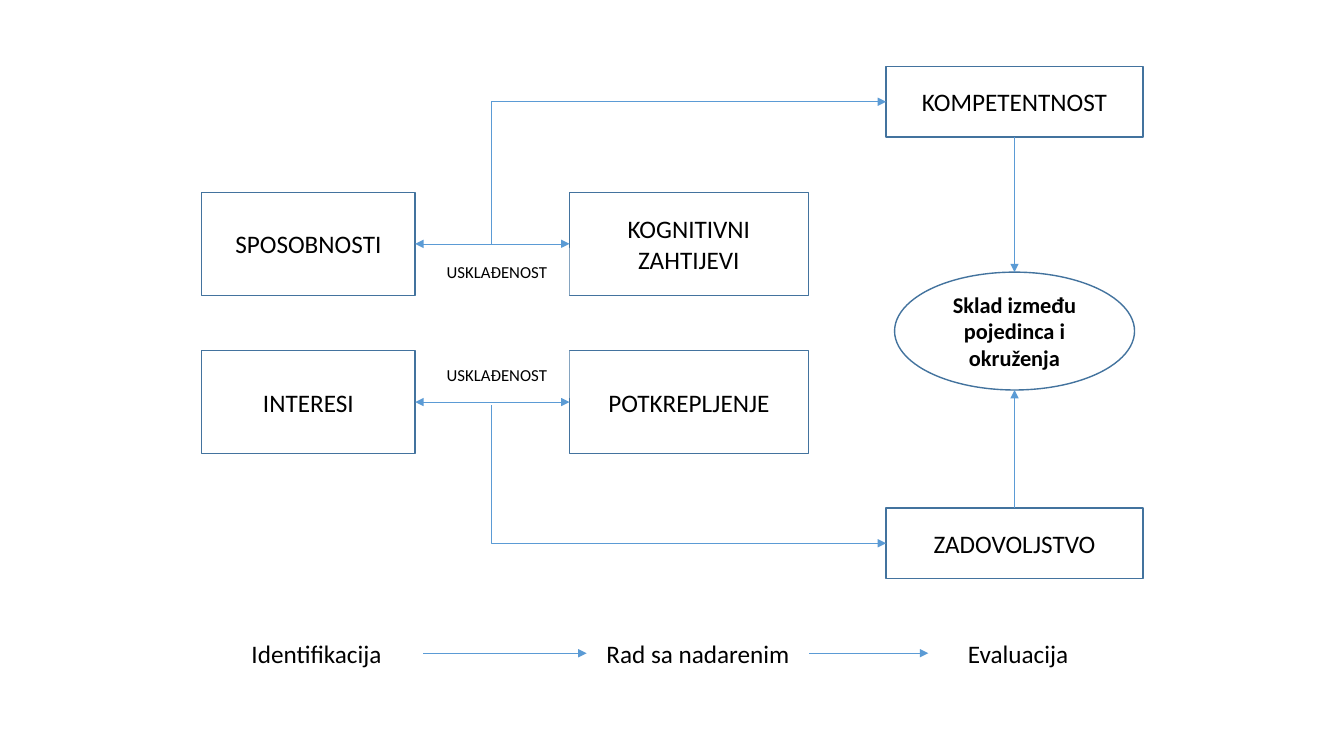
import pptx
import pptx.util
import pptx.dml.color
import pptx.enum.shapes
import pptx.enum.text
import pptx.oxml
import pptx.oxml.ns

Pt = pptx.util.Pt
RGB = pptx.dml.color.RGBColor
KIND = pptx.enum.shapes.MSO_SHAPE
LINK = pptx.enum.shapes.MSO_CONNECTOR
WHITE = RGB(0xFF, 0xFF, 0xFF)
BLACK = RGB(0, 0, 0)
EDGE = RGB(0x43, 0x73, 0x9E)
BLUE = RGB(0x5B, 0x9B, 0xD5)

# Content: each row runs left to right
PAIRS = [("SPOSOBNOSTI", "KOGNITIVNI ZAHTIJEVI"), ("INTERESI", "POTKREPLJENJE")]
MATCH = "USKLAĐENOST"
GOALS = ["KOMPETENTNOST", "ZADOVOLJSTVO"]
FIT = "Sklad između pojedinca i okruženja"
STEPS = [("Identifikacija", 149.8, 152.6),
         ("Rad sa nadarenim", 419, 159.1),
         ("Evaluacija", 663.1, 128.2)]

# Layout in points
COLS = [(144, 152.6), (406.8, 170.6)]
ROWS, ROW_H = [137.5, 250.5], 73.4
GOAL_X, GOAL_W, GOAL_H = 632.9, 183.6, 50.4
GOAL_Y = [47.5, 362.9]
FIT_W, FIT_H, FIT_Y = 171.4, 84.2, 194.4
MID_X = GOAL_X + GOAL_W / 2
TAG_X, TAG_W, TAG_H = 303.1, 103.7, 33.8
TAG_Y = [177.1, ROWS[1]]
BEND_X, BEND_Y = 351.4, [174.2, 289.4]
STEP_Y, STEP_H = 441.4, 50.4

deck = pptx.Presentation()
deck.slide_width, deck.slide_height = Pt(960), Pt(540)
slide = deck.slides.add_slide(deck.slide_layouts[6])


def box(text, x, y, w, h, size=18, edge=True, kind=KIND.RECTANGLE, bold=False):
    shape = slide.shapes.add_shape(kind, Pt(x), Pt(y), Pt(w), Pt(h))
    shape.shadow.inherit = False
    shape.fill.solid()
    shape.fill.fore_color.rgb = WHITE
    if edge:
        shape.line.color.rgb = EDGE
        shape.line.width = Pt(1)
    else:
        shape.line.fill.background()
    frame = shape.text_frame
    frame.word_wrap = True
    frame.vertical_anchor = pptx.enum.text.MSO_ANCHOR.MIDDLE
    frame.text = text
    para = frame.paragraphs[0]
    para.alignment = pptx.enum.text.PP_ALIGN.CENTER
    font = para.runs[0].font
    font.name, font.size, font.bold = "Calibri", Pt(size), bold
    font.color.rgb = BLACK
    return shape


def arrow(start=(0, 0), end=(0, 0), kind=LINK.STRAIGHT, both=False):
    line = slide.shapes.add_connector(kind, *map(Pt, start + end))
    line.line.color.rgb = BLUE
    line.line.width = Pt(0.5)
    props = line.line._get_or_add_ln()
    for tag in (["a:headEnd"] if both else []) + ["a:tailEnd"]:
        tip = pptx.oxml.ns.qn(tag)
        props.append(props.makeelement(tip, {"type": "triangle"}))
    props.addnext(pptx.oxml.parse_xml(
        "<a:effectLst %s/>" % pptx.oxml.ns.nsdecls("a")))
    return line


def join(left, right, both=False):
    """Link the facing sides of two boxes in a row."""
    line = arrow(both=both)
    line.begin_connect(left, 3)
    line.end_connect(right, 1)


def bend(start, end):
    """Draw an elbow arrow that turns straight above or below its start."""
    line = arrow(start, end, LINK.ELBOW)
    geom = line._element.spPr.find(pptx.oxml.ns.qn("a:prstGeom"))
    guide = geom.get_or_add_avLst()._add_gd()
    guide.set("name", "adj1")
    guide.set("fmla", "val -200")


fit = box(FIT, MID_X - FIT_W / 2, FIT_Y, FIT_W, FIT_H, 16,
          kind=KIND.OVAL, bold=True)
top, low = [box(text, GOAL_X, y, GOAL_W, GOAL_H)
            for text, y in zip(GOALS, GOAL_Y)]
down = arrow()
down.begin_connect(top, 2)
down.end_connect(fit, 0)
up = arrow((MID_X, GOAL_Y[1]), (MID_X, FIT_Y + FIT_H))
up.begin_connect(low, 0)

for pair, y, tag_y, bend_y, goal_y in zip(PAIRS, ROWS, TAG_Y, BEND_Y, GOAL_Y):
    left, right = [box(text, x, y, w, ROW_H)
                   for text, (x, w) in zip(pair, COLS)]
    join(left, right, both=True)
    box(MATCH, TAG_X, tag_y, TAG_W, TAG_H, 12, edge=False)
    bend((BEND_X, bend_y), (GOAL_X, goal_y + GOAL_H / 2))

steps = [box(text, x, STEP_Y, w, STEP_H, edge=False) for text, x, w in STEPS]
for left, right in zip(steps, steps[1:]):
    join(left, right)

deck.save("out.pptx")
